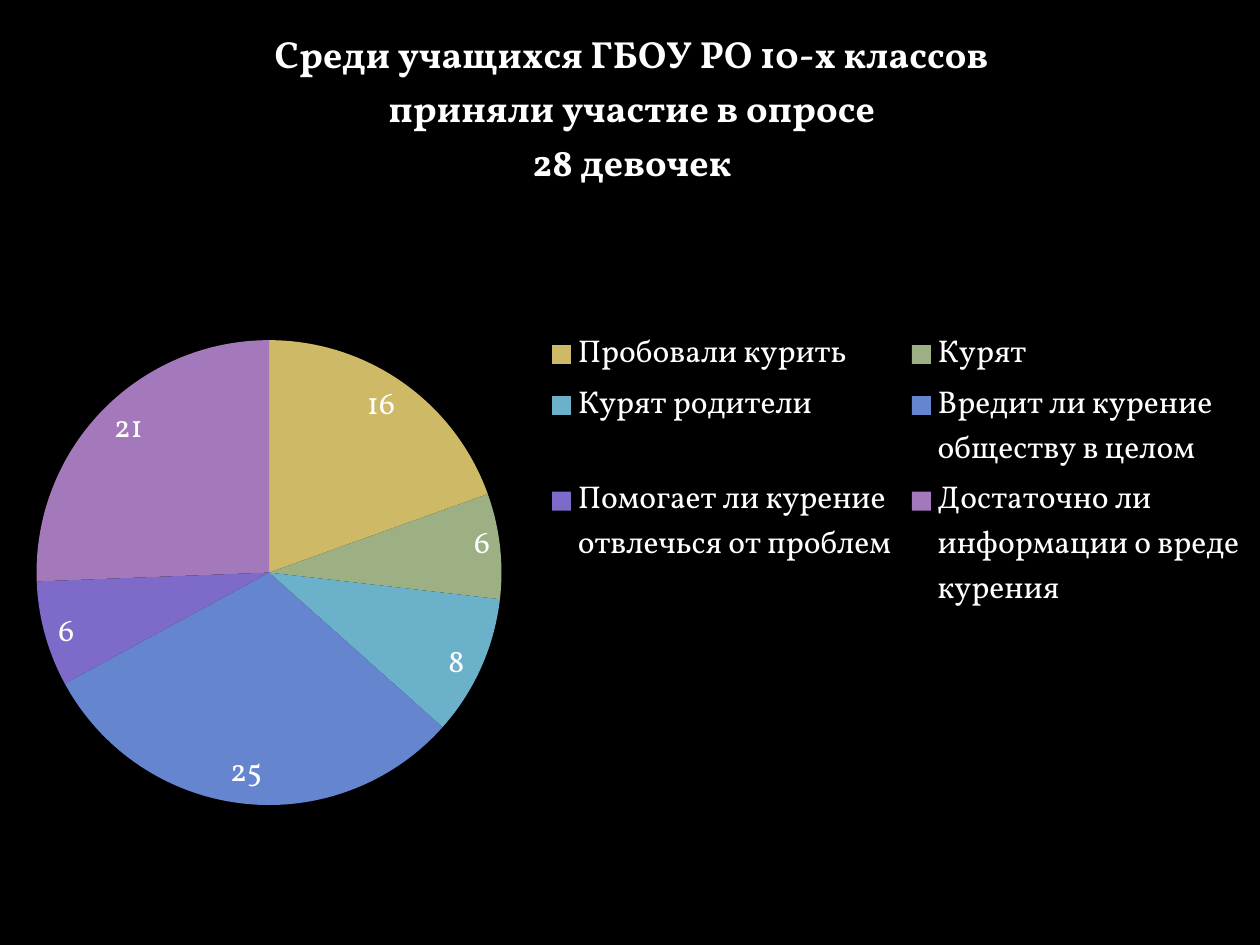
from pptx import Presentation
from pptx.chart.data import CategoryChartData
from pptx.dml.color import RGBColor
from pptx.enum.chart import XL_CHART_TYPE, XL_LABEL_POSITION, XL_LEGEND_POSITION
from pptx.enum.text import PP_ALIGN
from pptx.oxml import parse_xml
from pptx.oxml.ns import nsdecls, qn
from pptx.util import Inches, Pt

COLORS = {"background": "000000", "text": "FFFFFF"}
FONT = "Vollkorn"
TITLE = "Среди учащихся ГБОУ РО 10-х классов\nприняли участие в опросе\n28 девочек"
ANSWERS = [
    ("Пробовали курить", 16, "CEB966"),
    ("Курят", 6, "9CB084"),
    ("Курят родители", 8, "6BB1C9"),
    ("Вредит ли курение обществу в целом", 25, "6585CF"),
    ("Помогает ли курение отвлечься от проблем", 6, "7E6BC9"),
    ("Достаточно ли информации о вреде курения", 21, "A379BB"),
]


def style_font(font, size, bold=False):
    font.name = FONT
    font.size = Pt(size)
    font.bold = bold
    font.color.rgb = RGBColor.from_string(COLORS["text"])


def place(element, index, target=None, **shares):
    """Position a chart part by shares of the chart's width and height."""
    for old_layout in element.findall(qn("c:layout")):
        element.remove(old_layout)
    parts = f'<c:layoutTarget val="{target}"/>' if target else ""
    parts += "".join(f'<c:{side}Mode val="edge"/>' for side in "xy")
    parts += "".join(f'<c:{name} val="{share}"/>' for name, share in shares.items())
    element.insert(index, parse_xml(
        f'<c:layout {nsdecls("c")}><c:manualLayout>{parts}</c:manualLayout></c:layout>'))


presentation = Presentation()
presentation.slide_width = Inches(10)
presentation.slide_height = Inches(7.5)
slide = presentation.slides.add_slide(presentation.slide_layouts[6])
slide.background.fill.solid()
slide.background.fill.fore_color.rgb = RGBColor.from_string(COLORS["background"])

# Pie chart over the whole slide
chart_data = CategoryChartData()
chart_data.categories = [answer for answer, count, color in ANSWERS]
chart_data.add_series("Series 1", [count for answer, count, color in ANSWERS])
chart = slide.shapes.add_chart(
    XL_CHART_TYPE.PIE, 0, 0, presentation.slide_width, presentation.slide_height, chart_data
).chart
style_font(chart.font, 18)
plot = chart.plots[0]
plot.vary_by_categories = True
place(chart.element.find(".//" + qn("c:plotArea")), 0, "inner", x=0.029, y=0.36, w=0.369, h=0.492)

# Slices and their values
for index, (answer, count, color) in enumerate(ANSWERS):
    fill = plot.series[0].points[index].format.fill
    fill.solid()
    fill.fore_color.rgb = RGBColor.from_string(color)
plot.has_data_labels = True
labels = plot.data_labels
labels.show_value = True
labels.show_percentage = False
labels.position = XL_LABEL_POSITION.BEST_FIT
style_font(labels.font, 18)

# Title
chart.has_title = True
title = chart.chart_title
title.include_in_layout = False
title.text_frame.text = TITLE
for paragraph in title.text_frame.paragraphs:
    paragraph.alignment = PP_ALIGN.CENTER
    style_font(paragraph.font, 21.6, bold=True)
    for run in paragraph.runs:
        style_font(run.font, 21.6, bold=True)
place(chart.element.find(".//" + qn("c:title")), 1, x=0.215, y=0.027)

# Legend, flowing into two columns at the right
chart.has_legend = True
legend = chart.legend
legend.position = XL_LEGEND_POSITION.RIGHT
legend.include_in_layout = False
style_font(legend.font, 18)

presentation.save("out.pptx")
